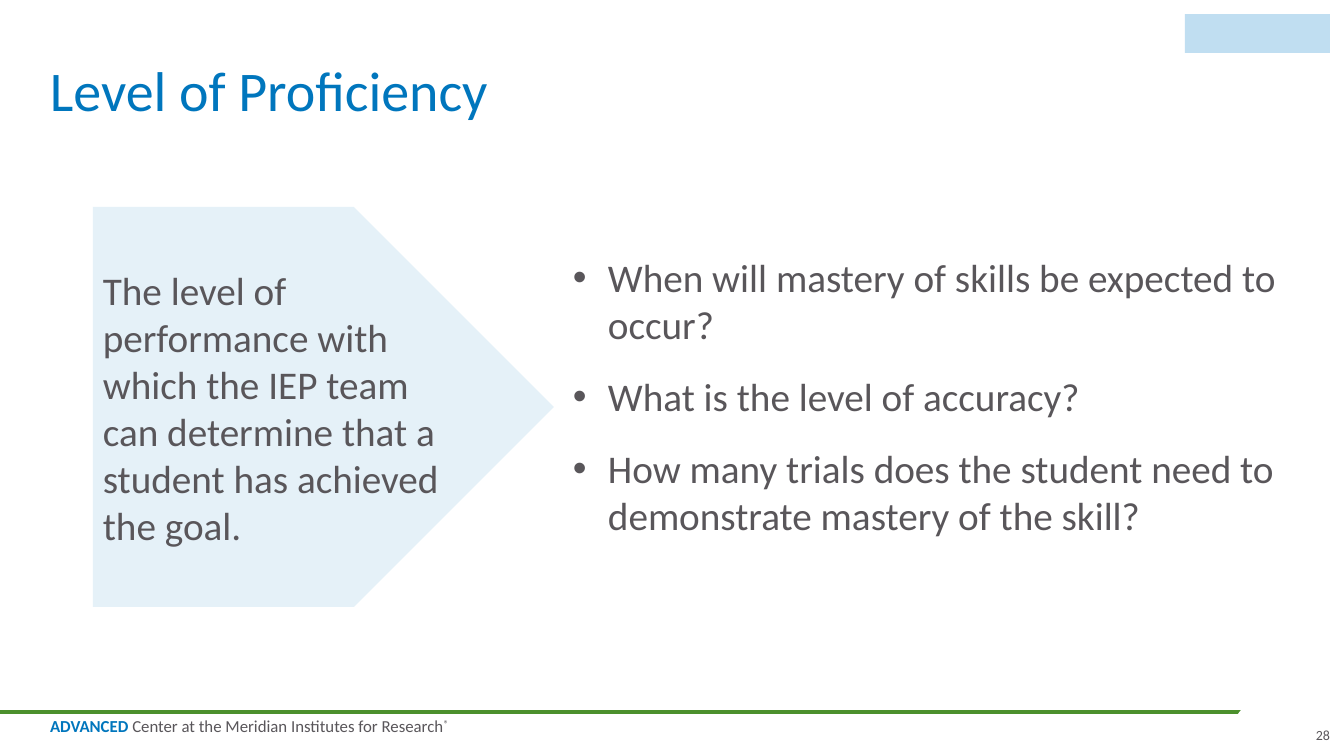
from dataclasses import dataclass

from lxml.etree import SubElement
from pptx import Presentation
from pptx.dml.color import RGBColor
from pptx.enum.shapes import MSO_CONNECTOR, MSO_SHAPE
from pptx.enum.text import MSO_ANCHOR, PP_ALIGN
from pptx.oxml.ns import qn
from pptx.util import Emu, Pt

EMU_PER_PX = 914400 / 100.8


def px(length):
    return Emu(round(length * EMU_PER_PX))


@dataclass(frozen=True)
class Theme:
    font: str = "Calibri"
    white: str = "FFFFFF"
    blue: str = "0076BD"
    grey: str = "59565A"
    green: str = "4C902D"
    tag: str = "C0DEF1"
    pale: str = "E5F1F8"
    title_size: int = 40
    body_size: int = 28
    footer_size: int = 12
    number_size: int = 10


class SlideBuilder:
    def __init__(self, deck, theme):
        self.theme = theme
        self.slide = deck.slides.add_slide(deck.slide_layouts[6])

    def shape(self, kind, left, top, width, height, color, rotation=0):
        shape = self.slide.shapes.add_shape(kind, px(left), px(top), px(width), px(height))
        shape.shadow.inherit = False
        shape.fill.solid()
        shape.fill.fore_color.rgb = RGBColor.from_string(color)
        shape.line.fill.background()
        shape.rotation = rotation
        return shape

    def rule(self, left, y, right, color, weight):
        line = self.slide.shapes.add_connector(
            MSO_CONNECTOR.STRAIGHT, px(left), px(y), px(right), px(y))
        line.line.color.rgb = RGBColor.from_string(color)
        line.line.width = Pt(weight)
        SubElement(line._element.spPr, qn("a:effectLst"))

    def text_box(self, left, top, width, height, anchor=MSO_ANCHOR.TOP):
        box = self.slide.shapes.add_textbox(px(left), px(top), px(width), px(height))
        frame = box.text_frame
        frame.word_wrap = True
        frame.vertical_anchor = anchor
        frame.margin_left = frame.margin_top = frame.margin_right = frame.margin_bottom = 0
        return box

    def span(self, para, text, size, color, bold=False, superscript=False):
        span = para.add_run()
        span.text = text
        span.font.name = self.theme.font
        span.font.size = Pt(size)
        span.font.bold = bold
        span.font.color.rgb = RGBColor.from_string(color)
        if superscript:
            span.font._element.set("baseline", "30000")

    def bullets(self, frame, items, indent, gap):
        for index, item in enumerate(items):
            para = frame.add_paragraph() if index else frame.paragraphs[0]
            if index:
                para.space_before = Pt(gap)
            properties = para._p.get_or_add_pPr()
            properties.set("marL", str(px(indent)))
            properties.set("indent", str(-px(indent)))
            bullet_color = SubElement(properties, qn("a:buClr"))
            SubElement(bullet_color, qn("a:srgbClr"), val=self.theme.grey)
            SubElement(properties, qn("a:buFont"), typeface="Arial")
            SubElement(properties, qn("a:buChar"), char="•")
            self.span(para, item, self.theme.body_size, self.theme.grey)


def main():
    deck = Presentation()
    deck.slide_width, deck.slide_height = px(1344), px(756)
    theme = Theme()
    page = SlideBuilder(deck, theme)

    # Footer
    page.rule(0, 712, 1310, theme.green, 3)
    footer = page.text_box(50, 719, 405, 17).text_frame.paragraphs[0]
    footer.line_spacing = 0.85
    page.span(footer, "ADVANCED", theme.footer_size, theme.blue, bold=True)
    page.span(footer, " Center at the Meridian Institutes for Research",
              theme.footer_size, theme.grey)
    page.span(footer, "®", theme.footer_size, theme.grey, superscript=True)
    page.shape(MSO_SHAPE.OVAL, 1226, 682, 120, 58, theme.white, rotation=332.1)

    # Title and corner tag
    title = page.text_box(50, 0, 1250, 124, MSO_ANCHOR.BOTTOM).text_frame.paragraphs[0]
    title.line_spacing = 0.9
    page.span(title, "Level of Proficiency", theme.title_size, theme.blue)
    page.shape(MSO_SHAPE.RECTANGLE, 1185, 14, 145, 39, theme.tag)

    # Definition arrow
    arrow = page.shape(MSO_SHAPE.PENTAGON, 93, 207, 461, 400, theme.pale)
    arrow.text_frame.word_wrap = True
    arrow.text_frame.vertical_anchor = MSO_ANCHOR.MIDDLE
    definition = arrow.text_frame.paragraphs[0]
    definition.alignment = PP_ALIGN.LEFT
    page.span(definition,
              "The level of performance with which the IEP team can determine "
              "that a student has achieved the goal.",
              theme.body_size, theme.grey)

    # Guiding questions
    questions = page.text_box(573, 253, 709, 353)
    questions.fill.solid()
    questions.fill.fore_color.rgb = RGBColor.from_string(theme.white)
    page.bullets(questions.text_frame, [
        "When will mastery of skills be expected to occur?",
        "What is the level of accuracy?",
        "How many trials does the student need to demonstrate mastery of the skill?",
    ], indent=35, gap=18)

    # Page number
    number = page.text_box(1313, 726, 17, 17, MSO_ANCHOR.BOTTOM).text_frame.paragraphs[0]
    number.alignment = PP_ALIGN.RIGHT
    number.space_after = Pt(6)
    page.span(number, "28", theme.number_size, theme.grey)

    deck.save("out.pptx")


if __name__ == "__main__":
    main()
